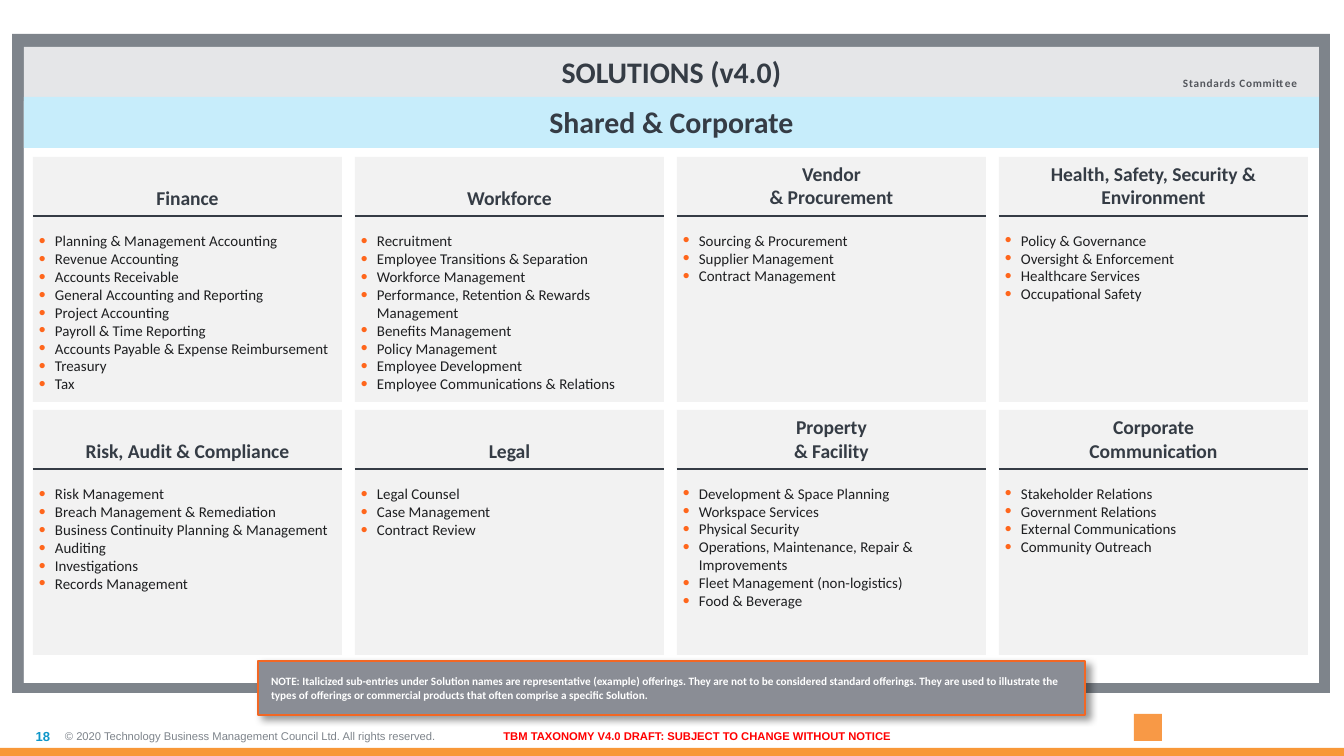
from lxml import etree
from pptx import Presentation
from pptx import util as u
from pptx.dml.color import RGBColor
from pptx.enum import shapes, text
from pptx.oxml.ns import qn

PX = 914400 / 134.4
DARK, INK, GREY = "353C45", "1E1F21", "7E848B"
LEFT, CENTER, RIGHT = text.PP_ALIGN.LEFT, text.PP_ALIGN.CENTER, text.PP_ALIGN.RIGHT
TOP, MIDDLE = text.MSO_ANCHOR.TOP, text.MSO_ANCHOR.MIDDLE

prs = Presentation()
prs.slide_width, prs.slide_height = [u.Emu(round(n * PX)) for n in (1344, 756)]
s = prs.slides.add_slide(prs.slide_layouts[6])


def add_box(at, fill=None, ins=(0, 0, 0, 0), anchor=TOP, wrap=True):
    """Add a filled rectangle, or a text box when there is no fill."""
    at = [u.Emu(round(n * PX)) for n in at]
    if fill:
        sp = s.shapes.add_shape(shapes.MSO_SHAPE.RECTANGLE, *at)
        sp.shadow.inherit = False
        sp.fill.solid()
        sp.fill.fore_color.rgb = RGBColor.from_string(fill)
        sp.line.fill.background()
    else:
        sp = s.shapes.add_textbox(*at)
    tf = sp.text_frame
    tf.word_wrap, tf.vertical_anchor = wrap, anchor
    for side, n in zip(("left", "top", "right", "bottom"), ins):
        setattr(tf, f"margin_{side}", u.Emu(round(n * PX)))
    return sp


def write(p, words, size, color, bold=True, font="Calibri", align=LEFT):
    p.text, p.alignment = words, align
    for br in p._p.findall(qn("a:br")):
        etree.SubElement(br, qn("a:rPr"), sz=str(round(size * 100)))
    for r in p.runs:
        for name, value in {"size": u.Pt(size), "bold": bold, "name": font}.items():
            setattr(r.font, name, value)
        r.font.color.rgb = RGBColor.from_string(color)


# Footer
footer = [
    ((65, 717, 452, 39), "© 2020 Technology Business Management Council Ltd. All rights reserved.",
     6, GREY, False, LEFT, True),
    ((0, 717, 50, 39), "18", 7, "0D96C9", True, RIGHT, True),
    ((501, 730, 392, 13), "TBM TAXONOMY V4.0 DRAFT: SUBJECT TO CHANGE WITHOUT NOTICE",
     6, "FF0000", True, CENTER, False),
]
for at, words, size, color, bold, align, wrap in footer:
    sp = add_box(at, anchor=MIDDLE, wrap=wrap)
    write(sp.text_frame.paragraphs[0], words, size, color, bold, "Arial", align)
add_box((1134, 714, 28, 27), "F89946")
add_box((0, 748, 1344, 8), "F89838")

# Frame and title bands
add_box((12, 34, 1318, 659), GREY)
title = add_box((24, 47, 1295, 636), "E5E6E8", (13, 7, 13, 7))
write(title.text_frame.paragraphs[0], "SOLUTIONS (v4.0)", 16, DARK, align=CENTER)
add_box((24, 101, 1295, 582), "FFFFFF")
tag = add_box((1183, 76, 117, 14), wrap=False)
write(tag.text_frame.paragraphs[0], "Standards Committee", 6, "53565C")
tag.text_frame.paragraphs[0].runs[0]._r.get_or_add_rPr().set("spc", "40")
band = add_box((24, 97, 1295, 51), "C7EDFB", (13, 7, 13, 7))
write(band.text_frame.paragraphs[0], "Shared & Corporate", 16, DARK, align=CENTER)

# Note
note = add_box((258, 661, 827, 54), "8A8D95", (13, 13, 13, 13), MIDDLE)
note.line.color.rgb = RGBColor.from_string("F26724")
note.line.width = u.Pt(0.75)
write(note.text_frame.paragraphs[0],
      "NOTE: Italicized sub-entries under Solution names are representative (example) offerings. "
      "They are not to be considered standard offerings. They are used to illustrate the types of "
      "offerings or commercial products that often comprise a specific Solution.", 6, "FFFFFF")
effects = note._element.spPr.find(qn("a:effectLst"))
shadow = etree.SubElement(effects, qn("a:outerShdw"), blurRad=str(u.Pt(4)), dist=str(u.Pt(3)),
                          dir="2700000", algn="tl", rotWithShape="0")
black = etree.SubElement(shadow, qn("a:srgbClr"), val="000000")
etree.SubElement(black, qn("a:alpha"), val="40000")

# Solution cards: heading, lines the heading takes, entries
cards = [
    ("Finance", 1, ["Planning & Management Accounting", "Revenue Accounting", "Accounts Receivable",
                    "General Accounting and Reporting", "Project Accounting",
                    "Payroll & Time Reporting", "Accounts Payable & Expense Reimbursement",
                    "Treasury", "Tax"]),
    ("Workforce", 1, ["Recruitment", "Employee Transitions & Separation", "Workforce Management",
                      "Performance, Retention & Rewards Management", "Benefits Management",
                      "Policy Management", "Employee Development",
                      "Employee Communications & Relations"]),
    ("Vendor\n& Procurement", 2, ["Sourcing & Procurement", "Supplier Management",
                                  "Contract Management"]),
    ("Health, Safety, Security & Environment", 2, ["Policy & Governance", "Oversight & Enforcement",
                                                   "Healthcare Services", "Occupational Safety"]),
    ("Risk, Audit & Compliance", 1, ["Risk Management", "Breach Management & Remediation",
                                     "Business Continuity Planning & Management", "Auditing",
                                     "Investigations", "Records Management"]),
    ("Legal", 1, ["Legal Counsel", "Case Management", "Contract Review"]),
    ("Property\n& Facility", 2, ["Development & Space Planning", "Workspace Services",
                                 "Physical Security",
                                 "Operations, Maintenance, Repair & Improvements",
                                 "Fleet Management (non-logistics)", "Food & Beverage"]),
    ("Corporate\nCommunication", 2, ["Stakeholder Relations", "Government Relations",
                                     "External Communications", "Community Outreach"]),
]
CARD_W, CARD_H, HEAD_H, HEAD_LINE = 309, 245, 59, 24
for i, (heading, lines, entries) in enumerate(cards):
    row, col = divmod(i, 4)
    x, y = 33 + 322 * col, 157 + 253 * row
    card = add_box((x, y, CARD_W, CARD_H), "F2F2F2", (5, 5 + HEAD_LINE * (2 - lines), 5, 5))
    tf = card.text_frame
    write(tf.paragraphs[0], heading, 10.5, DARK, align=CENTER)
    tf.paragraphs[0].space_after = u.Pt(12)
    for entry in entries:
        p = tf.add_paragraph()
        p.level = 1
        pPr = p._p.get_or_add_pPr()
        pPr.set("marL", str(round(17 * PX)))
        pPr.set("indent", str(round(-16 * PX)))
        bullet_color = etree.SubElement(pPr, qn("a:buClr"))
        etree.SubElement(bullet_color, qn("a:srgbClr"), val="FF661C")
        etree.SubElement(pPr, qn("a:buSzPct"), val="130000")
        etree.SubElement(pPr, qn("a:buFont"), typeface="Arial")
        etree.SubElement(pPr, qn("a:buChar"), char="•")
        write(p, entry, 8, INK, bold=False)
    ends = [u.Emu(round(n * PX)) for n in (x, y + HEAD_H, x + CARD_W, y + HEAD_H)]
    rule = s.shapes.add_connector(shapes.MSO_CONNECTOR.STRAIGHT, *ends)
    rule.line.color.rgb = RGBColor.from_string(DARK)
    rule.line.width = u.Pt(1)
    etree.SubElement(rule._element.spPr, qn("a:effectLst"))

prs.save("out.pptx")
